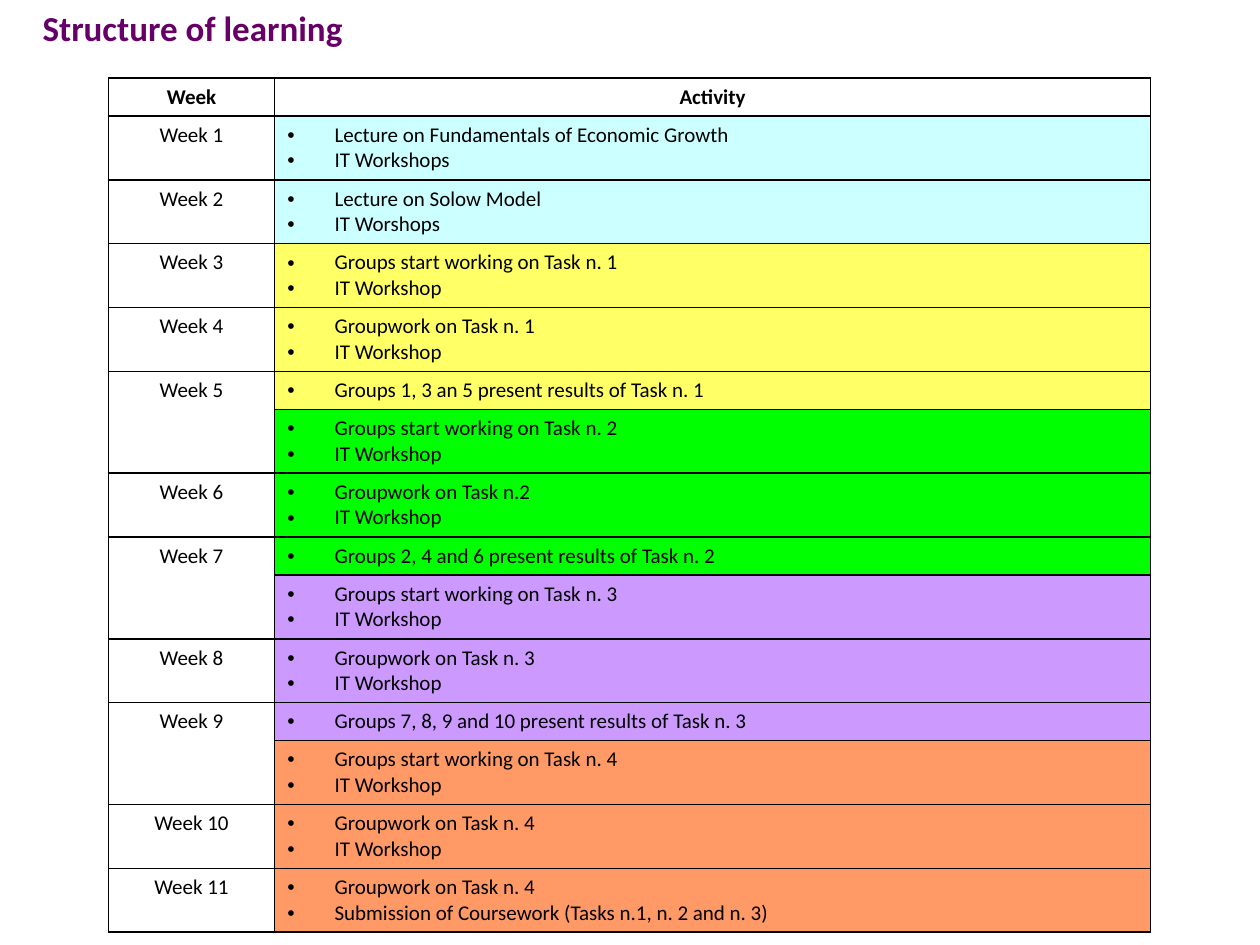
from dataclasses import dataclass

from lxml import etree
from pptx import Presentation
from pptx.dml.color import RGBColor
from pptx.enum.text import PP_ALIGN
from pptx.oxml.ns import qn
from pptx.util import Pt

LEFT, CENTER, JUSTIFY = PP_ALIGN.LEFT, PP_ALIGN.CENTER, PP_ALIGN.JUSTIFY


@dataclass(frozen=True)
class Theme:
    """Colours, font and type sizes of the slide."""
    font: str = "Calibri"
    title_size: int = 20
    body_size: int = 12
    title: str = "660066"
    ink: str = "000000"
    intro: str = "CCFFFF"
    task1: str = "FFFF66"
    task2: str = "00FF00"
    task3: str = "CC99FF"
    task4: str = "FF9966"


T = Theme()
COL_WIDTHS = (95.1, 500.4)
LINE_HEIGHT, ROW_PADDING = 14.8, 6.9
BULLET_INDENT = 27

SCHEDULE = [
    ("Week 1", T.intro, ["Lecture on Fundamentals of Economic Growth", "IT Workshops"]),
    ("Week 2", T.intro, ["Lecture on Solow Model", "IT Worshops"]),
    ("Week 3", T.task1, ["Groups start working on Task n. 1", "IT Workshop"]),
    ("Week 4", T.task1, ["Groupwork on Task n. 1", "IT Workshop"]),
    ("Week 5", T.task1, ["Groups 1, 3 an 5 present results of Task n. 1"]),
    (None, T.task2, ["Groups start working on Task n. 2", "IT Workshop"]),
    ("Week 6", T.task2, ["Groupwork on Task n.2", "IT Workshop"]),
    ("Week 7", T.task2, ["Groups 2, 4 and 6 present results of Task n. 2"]),
    (None, T.task3, ["Groups start working on Task n. 3", "IT Workshop"]),
    ("Week 8", T.task3, ["Groupwork on Task n. 3", "IT Workshop"]),
    ("Week 9", T.task3, ["Groups 7, 8, 9 and 10 present results of Task n. 3"]),
    (None, T.task4, ["Groups start working on Task n. 4", "IT Workshop"]),
    ("Week 10", T.task4, ["Groupwork on Task n. 4", "IT Workshop"]),
    ("Week 11", T.task4, ["Groupwork on Task n. 4",
                          "Submission of Coursework (Tasks n.1, n. 2 and n. 3)"]),
]


def add_bullet(p):
    """Give a paragraph a hanging round bullet."""
    pPr = p._p.get_or_add_pPr()
    pPr.set("marL", str(Pt(BULLET_INDENT)))
    pPr.set("indent", str(-Pt(BULLET_INDENT)))
    etree.SubElement(pPr, qn("a:buFont"), typeface="Arial")
    etree.SubElement(pPr, qn("a:buChar"), char="•")


def write(tf, lines, size=T.body_size, color=T.ink, bold=False, align=LEFT, bullet=False):
    """Write lines as paragraphs of a text frame."""
    for i, line in enumerate(lines):
        p = tf.add_paragraph() if i else tf.paragraphs[0]
        p.alignment = align
        if bullet:
            add_bullet(p)
        r = p.add_run()
        r.text = line
        r.font.name, r.font.size, r.font.bold = T.font, Pt(size), bold
        r.font.color.rgb = RGBColor.from_string(color)


def style_cell(cell, fill=None):
    """Draw thin borders around a cell and set its fill."""
    tcPr = cell._tc.get_or_add_tcPr()
    for side in ("lnL", "lnR", "lnT", "lnB"):
        ln = etree.SubElement(tcPr, qn(f"a:{side}"), w=str(Pt(1)))
        solid = etree.SubElement(ln, qn("a:solidFill"))
        etree.SubElement(solid, qn("a:srgbClr"), val=T.ink)
    if fill:
        cell.fill.solid()
        cell.fill.fore_color.rgb = RGBColor.from_string(fill)
    else:
        cell.fill.background()


def add_title(s, text):
    """Add the slide title."""
    tf = s.shapes.add_textbox(Pt(17.3), Pt(0), Pt(252), Pt(67.7)).text_frame
    tf.word_wrap = True
    write(tf, [text], size=T.title_size, color=T.title, bold=True)


def add_schedule(s):
    """Add the table of weeks and activities."""
    heights = [ROW_PADDING + LINE_HEIGHT * n
               for n in [1] + [len(activities) for _, _, activities in SCHEDULE]]
    table = s.shapes.add_table(len(heights), 2, Pt(61.9), Pt(44.6),
                               Pt(sum(COL_WIDTHS)), Pt(sum(heights))).table
    table.first_row = table.horz_banding = False
    for col, width in zip(table.columns, COL_WIDTHS):
        col.width = Pt(width)
    for row, height in zip(table.rows, heights):
        row.height = Pt(height)
    for c, heading in enumerate(("Week", "Activity")):
        style_cell(table.cell(0, c))
        write(table.cell(0, c).text_frame, [heading], bold=True, align=CENTER)
    for i, (week, fill, activities) in enumerate(SCHEDULE, start=1):
        week_cell, activity_cell = table.cell(i, 0), table.cell(i, 1)
        style_cell(week_cell)
        style_cell(activity_cell, fill)
        write(activity_cell.text_frame, activities, align=JUSTIFY, bullet=True)
        if week:
            write(week_cell.text_frame, [week], align=CENTER)
        else:
            table.cell(i - 1, 0).merge(week_cell)


def main():
    """Build and save the slide."""
    prs = Presentation()
    prs.slide_width, prs.slide_height = Pt(720), Pt(540)
    s = prs.slides.add_slide(prs.slide_layouts[6])
    add_title(s, "Structure of learning")
    add_schedule(s)
    prs.save("out.pptx")


if __name__ == "__main__":
    main()
